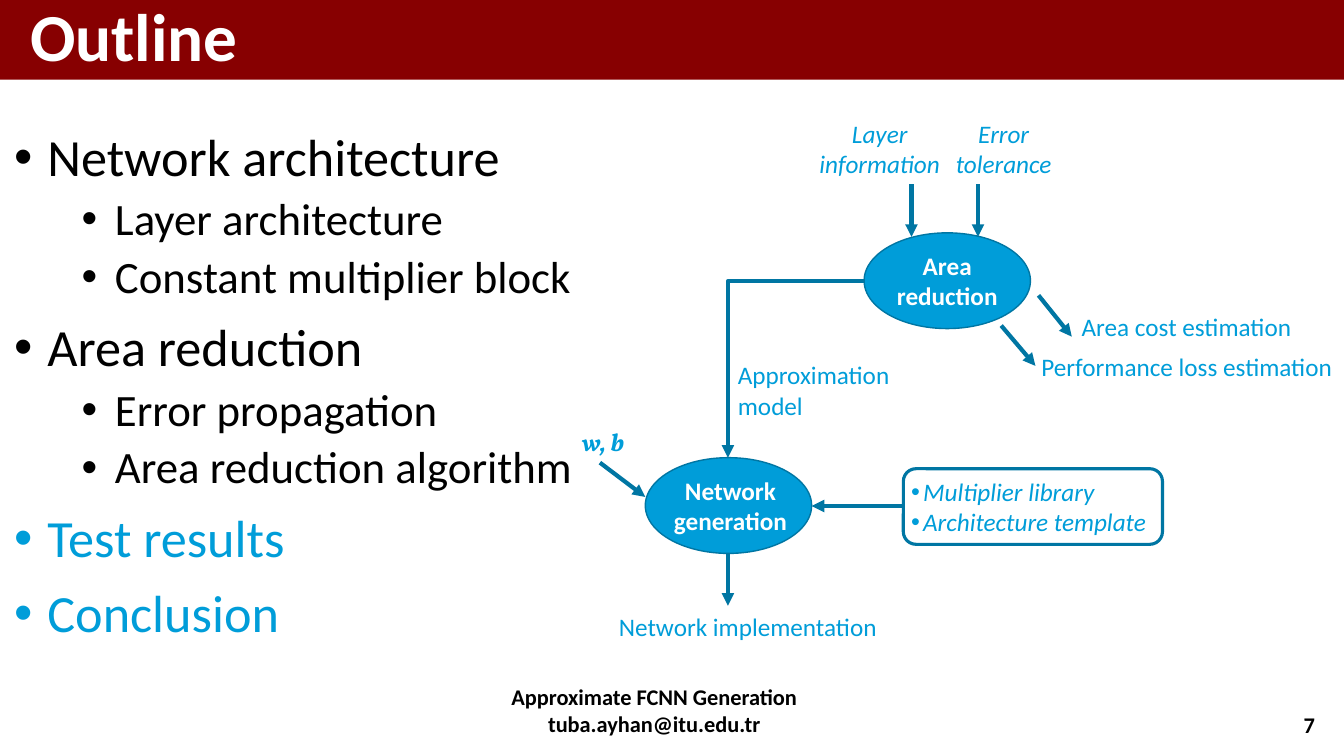
from dataclasses import dataclass

from lxml import etree
from pptx import Presentation
from pptx.dml.color import RGBColor
from pptx.enum.shapes import MSO_CONNECTOR, MSO_SHAPE
from pptx.enum.text import MSO_ANCHOR, MSO_AUTO_SIZE, PP_ALIGN
from pptx.oxml.ns import qn
from pptx.util import Inches, Pt

LEFT, CENTER, RIGHT = PP_ALIGN.LEFT, PP_ALIGN.CENTER, PP_ALIGN.RIGHT
TOP, MIDDLE, BOTTOM = MSO_ANCHOR.TOP, MSO_ANCHOR.MIDDLE, MSO_ANCHOR.BOTTOM
RECT, OVAL, ROUND = MSO_SHAPE.RECTANGLE, MSO_SHAPE.OVAL, MSO_SHAPE.ROUNDED_RECTANGLE
STRAIGHT, ELBOW = MSO_CONNECTOR.STRAIGHT, MSO_CONNECTOR.ELBOW


@dataclass(frozen=True)
class Theme:
    font: str = "Calibri"
    math: str = "Vollkorn"
    red: RGBColor = RGBColor(0x87, 0x00, 0x01)
    blue: RGBColor = RGBColor(0x00, 0x9D, 0xD9)
    edge: RGBColor = RGBColor(0x00, 0x76, 0xA3)
    white: RGBColor = RGBColor(0xFF, 0xFF, 0xFF)
    black: RGBColor = RGBColor(0x00, 0x00, 0x00)
    title: float = 48
    topic: float = 37.3
    sub: float = 32
    label: float = 18
    foot: float = 16


THEME = Theme()

# level, text, colour
OUTLINE = [
    (0, "Network architecture", THEME.black),
    (1, "Layer architecture", THEME.black),
    (1, "Constant multiplier block", THEME.black),
    (0, "Area reduction", THEME.black),
    (1, "Error propagation", THEME.black),
    (1, "Area reduction algorithm", THEME.black),
    (0, "Test results", THEME.blue),
    (0, "Conclusion", THEME.blue),
]

# text, box, alignment, side inset, italic
LABELS = [
    ("Approximation model", (7.22, 3.52, 1.74, 0.71), LEFT, 0.1, False),
    ("Network implementation", (6.04, 6.02, 3.36, 0.4), LEFT, 0.1, False),
    ("Layer information", (8.05, 1.12, 1.35, 0.71), CENTER, 0.04, True),
    ("Error tolerance", (9.28, 1.12, 1.35, 0.71), CENTER, 0.04, True),
    ("Performance loss estimation", (10.23, 3.44, 3.11, 0.4), LEFT, 0.1, False),
    ("Area cost estimation", (10.63, 3.04, 2.44, 0.4), LEFT, 0.1, False),
]

ARROWS = [
    ((7.22, 5.49), (7.22, 6.01)),
    ((8.96, 5.02), (8.05, 5.02)),
    ((9.04, 1.83), (9.04, 2.35)),
    ((9.7, 1.83), (9.7, 2.35)),
    ((5.95, 4.59), (6.4, 4.93)),
    ((10.3, 2.93), (10.63, 3.34)),
    ((9.93, 3.23), (10.27, 3.63)),
]


def inch(box):
    return [Inches(n) for n in box]


def style(par, size, color, bold=False, italic=False, align=LEFT, face=THEME.font):
    par.alignment = align
    font = par.font
    font.name, font.size, font.color.rgb = face, Pt(size), color
    font.bold, font.italic = bold, italic


def bullet(par, indent, hang):
    props = par._p.get_or_add_pPr()
    props.set("marL", str(Inches(indent)))
    props.set("indent", str(-Inches(hang)))
    etree.SubElement(props, qn("a:buFont")).set("typeface", "Arial")
    etree.SubElement(props, qn("a:buChar")).set("char", "•")


def setup(frame, anchor=TOP, left=0.1, right=0.1):
    frame.word_wrap = True
    frame.auto_size = MSO_AUTO_SIZE.NONE
    frame.vertical_anchor = anchor
    frame.margin_left, frame.margin_right = Inches(left), Inches(right)
    frame.margin_top = frame.margin_bottom = Inches(0.05)


def write(frame, lines):
    """Fill the frame with one paragraph a line and return the paragraphs."""
    frame.text = "\n".join(lines)
    return frame.paragraphs


def place(holder, box):
    holder.left, holder.top, holder.width, holder.height = inch(box)


def label(slide, lines, box, anchor=TOP, inset=0.1, **look):
    frame = slide.shapes.add_textbox(*inch(box)).text_frame
    setup(frame, anchor, inset, inset)
    pars = write(frame, lines)
    for par in pars:
        style(par, **look)
    return pars


def shape(slide, kind, box, fill, edge=None, width=1):
    item = slide.shapes.add_shape(kind, *inch(box))
    item.shadow.inherit = False
    item.fill.solid()
    item.fill.fore_color.rgb = fill
    if edge is None:
        item.line.fill.background()
    else:
        item.line.color.rgb, item.line.width = edge, Pt(width)
    return item


def node(slide, text, left, top, right):
    item = shape(slide, OVAL, (left, top, 1.65, 0.95), THEME.blue, THEME.edge)
    setup(item.text_frame, MIDDLE, 0.04, right)
    par, = write(item.text_frame, [text])
    style(par, THEME.label, THEME.white, bold=True, align=CENTER)


def arrow(slide, start, end, kind=STRAIGHT):
    link = slide.shapes.add_connector(kind, *inch(start + end))
    link.line.color.rgb, link.line.width = THEME.edge, Pt(3)
    tip = etree.SubElement(link.line._get_or_add_ln(), qn("a:tailEnd"))
    tip.set("type", "triangle")
    props = link._element.spPr
    etree.SubElement(props, qn("a:effectLst"))
    if kind == ELBOW:
        props.find(qn("a:prstGeom")).set("prst", "bentConnector2")


def header(slide):
    banner = shape(slide, RECT, (0, 0, 13.33, 0.79), THEME.red)
    slide.shapes._spTree.insert(2, banner._element)
    title = slide.shapes.title
    place(title, (0.2, 0, 12.93, 0.79))
    setup(title.text_frame, MIDDLE)
    par, = write(title.text_frame, ["Outline"])
    style(par, THEME.title, THEME.white, bold=True)
    par.line_spacing = 0.9


def outline(slide):
    body = slide.placeholders[1]
    place(body, (0.04, 1.25, 5.86, 4.76))
    setup(body.text_frame)
    pars = write(body.text_frame, [text for _, text, _ in OUTLINE])
    for par, (level, _, color) in zip(pars, OUTLINE):
        par.level = level
        bullet(par, 1 if level else 0.33, 0.33)
        style(par, THEME.sub if level else THEME.topic, color)
        par.line_spacing = 0.9
        par.space_before = Pt(6.7 if level else 13.3)


def library(slide):
    card = shape(slide, ROUND, (8.96, 4.65, 2.57, 0.75), THEME.white, THEME.edge, 2.25)
    setup(card.text_frame, MIDDLE, 0.04, 0)
    for par in write(card.text_frame, ["Multiplier library", "Architecture template"]):
        bullet(par, 0.12, 0.12)
        style(par, THEME.label, THEME.blue, italic=True)


def diagram(slide):
    node(slide, "Area reduction", 8.57, 2.31, 0.04)
    node(slide, "Network generation", 6.4, 4.54, 0)
    library(slide)
    arrow(slide, (8.57, 2.79), (7.22, 4.54), ELBOW)
    for start, end in ARROWS:
        arrow(slide, start, end)
    for text, box, align, inset, italic in LABELS:
        label(slide, [text], box, inset=inset, size=THEME.label,
              color=THEME.blue, italic=italic, align=align)
    label(slide, ["w, b"], (5.65, 4.18, 0.66, 0.4), inset=0.04, size=THEME.label,
          color=THEME.blue, bold=True, italic=True, align=CENTER, face=THEME.math)


def footer(slide):
    look = dict(anchor=BOTTOM, size=THEME.foot, color=THEME.black, bold=True)
    lines = ["Approximate FCNN Generation", "tuba.ayhan@itu.edu.tr"]
    name, _ = label(slide, lines, (4.42, 6.96, 4.5, 0.4), align=CENTER, **look)
    name._p.get_or_add_pPr().set("marR", str(Inches(0.36)))
    label(slide, ["7"], (9.71, 6.97, 3.43, 0.4), align=RIGHT, **look)


def main():
    deck = Presentation()
    deck.slide_width, deck.slide_height = Inches(13.33), Inches(7.5)
    slide = deck.slides.add_slide(deck.slide_layouts[1])
    header(slide)
    outline(slide)
    diagram(slide)
    footer(slide)
    deck.save("out.pptx")


if __name__ == "__main__":
    main()
